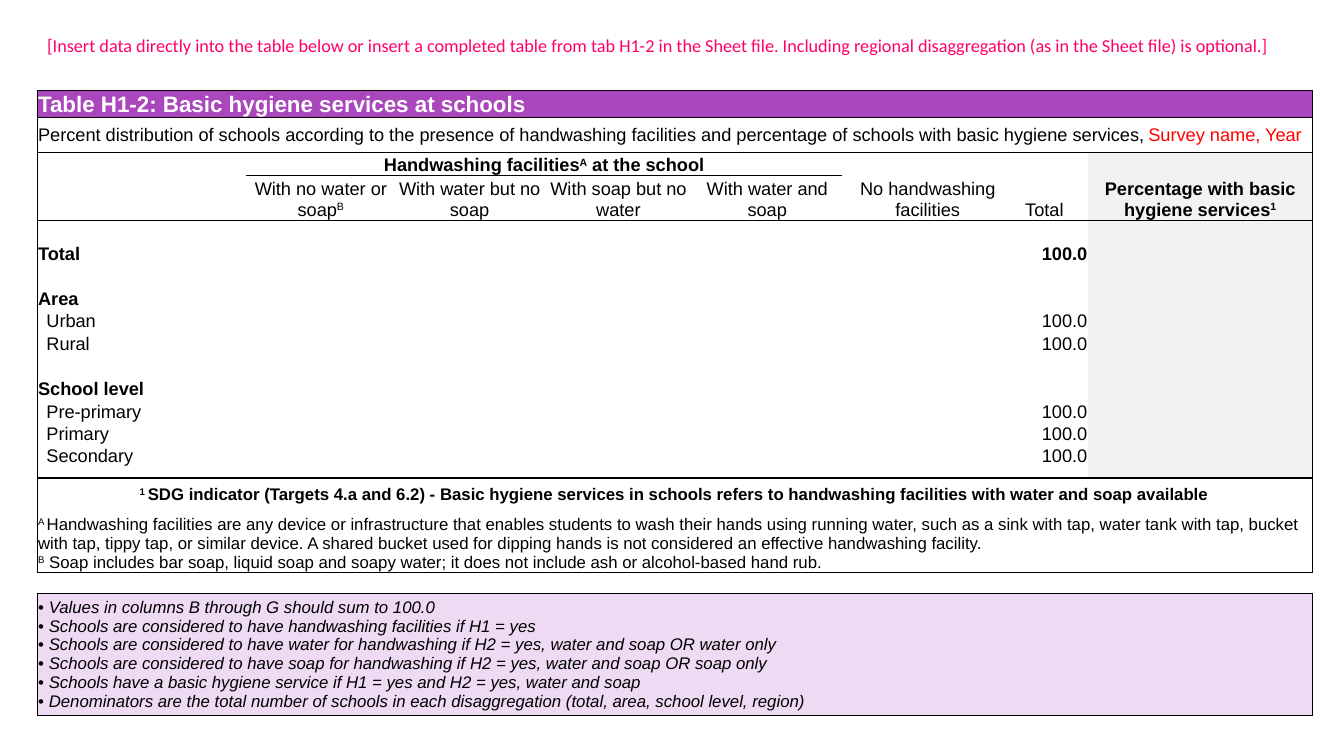
from lxml.etree import SubElement
from pptx import Presentation
from pptx.dml.color import RGBColor
from pptx.enum.text import MSO_ANCHOR as ANCHOR, MSO_AUTO_SIZE as AUTO, PP_ALIGN as ALIGN
from pptx.oxml.ns import qn
from pptx.util import Cm, Pt

BLACK = RGBColor(0x00, 0x00, 0x00)
WHITE = RGBColor(0xFF, 0xFF, 0xFF)
RED = RGBColor(0xFF, 0x00, 0x00)
PINK = RGBColor(0xFF, 0x00, 0x66)
PURPLE = RGBColor(0xAB, 0x47, 0xBC)
LILAC = RGBColor(0xEE, 0xDA, 0xF2)
GREY = RGBColor(0xF2, 0xF2, 0xF2)
NO_STYLE = "{2D5ABB26-0587-4C30-8999-92F81FD0307C}"

COL_WIDTHS = [5.27] + [3.75] * 4 + [0.33, 3.68, 2.2, 5.65]
ROW_HEIGHTS = [0.68, 0.88, 0.55, 1.07] + [0.56] * 10 + [0.82, 0.82, 1.5, 0.53, 3.08]
LAST_ROW, LAST_COL = len(ROW_HEIGHTS) - 1, len(COL_WIDTHS) - 1
SECONDARY, SDG, FOOTNOTES, GAP, NOTES = 14, 15, 16, 17, 18
FULL_WIDTH = [0, 1, SDG, FOOTNOTES, GAP, NOTES]
TALL_HEADERS = [0, 6, 7, 8]


def add_text(p, text, size=13, bold=False, color=BLACK, font="Arial", italic=False):
    for i, part in enumerate(text.split("^")):
        if part:
            r = p.add_run()
            r.text = part
            f = r.font
            f.name, f.size, f.bold, f.italic = font, Pt(size), bold, italic
            f.color.rgb = color
            if i % 2:
                r._r.get_or_add_rPr().set("baseline", "30000")


def fill_cell(row, col, text, align=ALIGN.LEFT, anchor=ANCHOR.MIDDLE, **style):
    cell = table.cell(row, col)
    cell.vertical_anchor = anchor
    p = cell.text_frame.paragraphs[0]
    p.alignment = align
    add_text(p, text, **style)
    return cell


prs = Presentation()
prs.slide_width, prs.slide_height = Cm(33.87), Cm(19.05)
s = prs.slides.add_slide(prs.slide_layouts[6])

tf = s.shapes.add_textbox(Cm(0.94), Cm(0.74), Cm(32.13), Cm(0.81)).text_frame
tf.word_wrap = True
tf.auto_size = AUTO.SHAPE_TO_FIT_TEXT
add_text(tf.paragraphs[0], "[Insert data directly into the table below or insert a completed table from tab H1-2 "
         "in the Sheet file. Including regional disaggregation (as in the Sheet file) is optional.]",
         color=PINK, font="Calibri")

frame = s.shapes.add_table(len(ROW_HEIGHTS), len(COL_WIDTHS), Cm(0.94), Cm(2.27),
                           Cm(sum(COL_WIDTHS)), Cm(sum(ROW_HEIGHTS)))
table = frame.table
table.first_row = table.horz_banding = False
table._tbl.tblPr.find(qn("a:tableStyleId")).text = NO_STYLE
for column, width in zip(table.columns, COL_WIDTHS):
    column.width = Cm(width)
for row, height in zip(table.rows, ROW_HEIGHTS):
    row.height = Cm(height)

for row in FULL_WIDTH:
    table.cell(row, 0).merge(table.cell(row, LAST_COL))
for col in TALL_HEADERS:
    table.cell(2, col).merge(table.cell(3, col))
table.cell(2, 1).merge(table.cell(2, 4))

rules = {row: 0.5 for row in (-1, 0, 1, 3, FOOTNOTES, GAP, NOTES)}
rules[SECONDARY] = 1
for row in range(LAST_ROW + 1):
    for col in range(LAST_COL + 1):
        cell = table.cell(row, col)
        cell.margin_left = cell.margin_right = cell.margin_top = Cm(0.02)
        cell.margin_bottom = 0
        SubElement(cell.text_frame.paragraphs[0]._p, qn("a:endParaRPr"), sz="1200")

        tall = row == 2 and col in TALL_HEADERS
        group = 0.5 if 1 <= col <= 4 else 0
        side = 0.5 if row != GAP else 0
        borders = {
            "a:lnL": side if col == 0 else 0,
            "a:lnR": side if col == LAST_COL or (col == 0 and row in FULL_WIDTH) else 0,
            "a:lnT": group if row == 3 else rules.get(row - 1, 0),
            "a:lnB": 0.5 if tall else group if row == 2 else rules.get(row, 0),
        }
        tcPr = cell._tc.get_or_add_tcPr()
        for tag, width in borders.items():
            ln = SubElement(tcPr, qn(tag), w=str(Pt(width)))
            if width:
                SubElement(SubElement(ln, qn("a:solidFill")), qn("a:srgbClr"), val=str(BLACK))
            else:
                SubElement(ln, qn("a:noFill"))

        if row == 0:
            color = PURPLE
        elif row == NOTES:
            color = LILAC
        elif col == LAST_COL and 2 <= row <= SECONDARY:
            color = GREY
        else:
            cell.fill.background()
            continue
        cell.fill.solid()
        cell.fill.fore_color.rgb = color

fill_cell(0, 0, "Table H1-2: Basic hygiene services at schools", size=16, bold=True, color=WHITE)
subtitle = fill_cell(1, 0, "Percent distribution of schools according to the presence of handwashing facilities "
                     "and percentage of schools with basic hygiene services, ")
add_text(subtitle.text_frame.paragraphs[0], "Survey name, Year", color=RED)

headers = [
    (2, 1, "Handwashing facilities^A^ at the school", True),
    (3, 1, "With no water or soap^B", False),
    (3, 2, "With water but no soap", False),
    (3, 3, "With soap but no water", False),
    (3, 4, "With water and soap", False),
    (2, 6, "No handwashing facilities", False),
    (2, 7, "Total", False),
    (2, 8, "Percentage with basic hygiene services^1", True),
]
for row, col, text, bold in headers:
    fill_cell(row, col, text, ALIGN.CENTER, ANCHOR.BOTTOM, bold=bold)

labels = {5: "Total", 7: "Area", 8: "Urban", 9: "Rural", 11: "School level",
          12: "Pre-primary", 13: "Primary", SECONDARY: "Secondary"}
headings = ["Total", "Area", "School level"]
for row, label in labels.items():
    bold = label in headings
    anchor = ANCHOR.TOP if row == SECONDARY else ANCHOR.MIDDLE
    cell = fill_cell(row, 0, label, anchor=anchor, bold=bold)
    if not bold:
        cell.margin_left = Cm(0.23)
    if label not in headings[1:]:
        fill_cell(row, 7, "100.0", ALIGN.RIGHT, anchor, bold=bold)

fill_cell(SDG, 0, "^1 ^SDG indicator (Targets 4.a and 6.2) - Basic hygiene services in schools refers to "
          "handwashing facilities with water and soap available", ALIGN.CENTER, size=12, bold=True)

cell = fill_cell(FOOTNOTES, 0, "^A ^Handwashing facilities are any device or infrastructure that enables students "
                 "to wash their hands using running water, such as a sink with tap, water tank with tap, bucket "
                 "with tap, tippy tap, or similar device. A shared bucket used for dipping hands is not considered "
                 "an effective handwashing facility.", anchor=ANCHOR.BOTTOM, size=12)
add_text(cell.text_frame.add_paragraph(), "^B^ Soap includes bar soap, liquid soap and soapy water; "
         "it does not include ash or alcohol-based hand rub.", size=12)

notes = [
    "Values in columns B through G should sum to 100.0",
    "Schools are considered to have handwashing facilities if H1 = yes",
    "Schools are considered to have water for handwashing if H2 = yes, water and soap OR water only",
    "Schools are considered to have soap for handwashing if H2 = yes, water and soap OR soap only",
    "Schools have a basic hygiene service if H1 = yes and H2 = yes, water and soap",
    "Denominators are the total number of schools in each disaggregation (total, area, school level, region)",
]
cell = table.cell(NOTES, 0)
cell.vertical_anchor = ANCHOR.MIDDLE
tf = cell.text_frame
for i, note in enumerate(notes):
    p = tf.add_paragraph() if i else tf.paragraphs[0]
    pPr = p._p.get_or_add_pPr()
    pPr.set("marL", str(Cm(0.27)))
    pPr.set("indent", str(-Cm(0.27)))
    SubElement(pPr, qn("a:buFont"), typeface="Arial")
    SubElement(pPr, qn("a:buChar"), char="•")
    add_text(p, note, size=12, italic=True)

prs.save("out.pptx")
